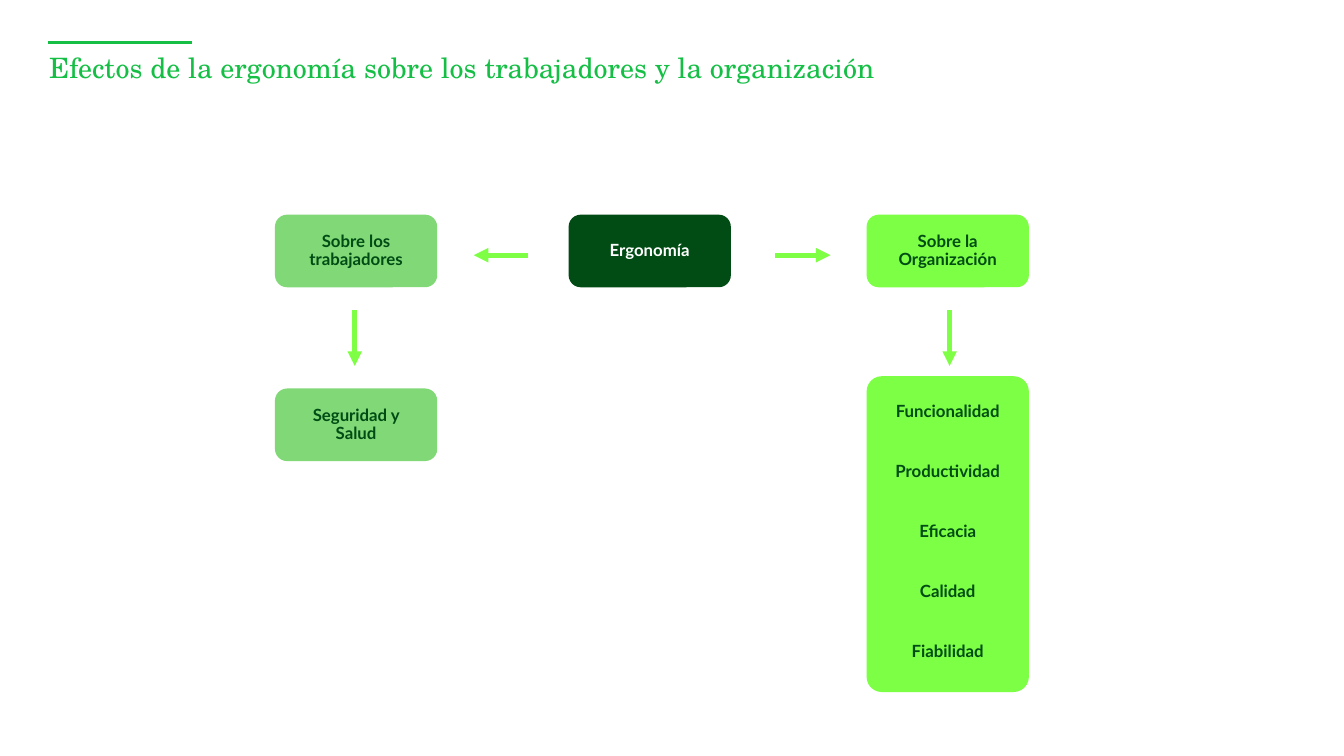
from lxml.etree import SubElement
from pptx import Presentation
from pptx.dml.color import RGBColor
from pptx.enum.shapes import MSO_CONNECTOR as Connector, MSO_SHAPE as Shape
from pptx.enum.text import MSO_ANCHOR as Anchor, PP_ALIGN as Align
from pptx.oxml.ns import qn
from pptx.util import Cm, Pt

COLORS = {
    "title": "15BF45",
    "dark": "004C14",
    "workers": "81D877",
    "organization": "7CFF44",
    "arrow": "7EFF45",
    "white": "FFFFFF",
}
CARD_WIDTH, CARD_HEIGHT = 4.09, 1.83
WORKERS_LEFT, ERGONOMICS_LEFT, ORGANIZATION_LEFT = 6.93, 14.33, 21.84
TOP_ROW = 5.41


class DiagramSlide:
    """Draws the parts of the diagram on one slide in a shared style."""

    def __init__(self, slide):
        self.shapes = slide.shapes

    def color(self, name):
        return RGBColor.from_string(COLORS[name])

    def line(self, start, end, color, width, arrow=False):
        line = self.shapes.add_connector(
            Connector.STRAIGHT, *(Cm(value) for value in (*start, *end)))
        line.line.color.rgb = self.color(color)
        line.line.width = Pt(width)
        if arrow:
            SubElement(line.line._get_or_add_ln(), qn("a:tailEnd"), type="triangle")
        SubElement(line._element.spPr, qn("a:effectLst"))

    def arrow(self, start, end):
        self.line(start, end, "arrow", 3.5, arrow=True)

    def text(self, words, box, font, size, color, insets=(0, 0), bold=False,
             align=Align.LEFT, anchor=Anchor.TOP):
        frame = self.shapes.add_textbox(*(Cm(value) for value in box)).text_frame
        frame.word_wrap = True
        frame.vertical_anchor = anchor
        frame.margin_left = frame.margin_right = Cm(insets[0])
        frame.margin_top = frame.margin_bottom = Cm(insets[1])
        paragraph = frame.paragraphs[0]
        paragraph.alignment = align
        paragraph.line_spacing = 0.9
        run = paragraph.add_run()
        run.text = words
        run.font.name = font
        run.font.size = Pt(size)
        run.font.bold = bold
        run.font.color.rgb = self.color(color)

    def label(self, words, left, middle, color="dark", lines=1):
        height = 0.25 + 0.46 * lines
        box = (left + 0.13, middle - height / 2, CARD_WIDTH - 0.26, height)
        self.text(words, box, "Lato", 12, color, (0.3, 0.13), True,
                  Align.CENTER, Anchor.MIDDLE)

    def panel(self, left, top, height, fill, rounding=0.1667):
        panel = self.shapes.add_shape(
            Shape.ROUNDED_RECTANGLE, Cm(left), Cm(top), Cm(CARD_WIDTH), Cm(height))
        panel.adjustments[0] = rounding
        panel.shadow.inherit = False
        panel.fill.solid()
        panel.fill.fore_color.rgb = self.color(fill)
        panel.line.fill.background()

    def card(self, words, left, top, fill, color="dark", lines=2):
        self.panel(left, top, CARD_HEIGHT, fill)
        self.label(words, left, top + CARD_HEIGHT / 2, color, lines)


def main():
    deck = Presentation()
    deck.slide_width, deck.slide_height = Cm(33.87), Cm(19.05)
    diagram = DiagramSlide(deck.slides.add_slide(deck.slide_layouts[6]))

    diagram.line((1.22, 1.07), (4.84, 1.07), "title", 1.75)
    diagram.text("Efectos de la ergonomía sobre los trabajadores y la organización",
                 (1.24, 1.37, 27.41, 1.45), "TeX Gyre Schola", 20, "title")

    diagram.card("Sobre los trabajadores", WORKERS_LEFT, TOP_ROW, "workers")
    diagram.card("Seguridad y Salud", WORKERS_LEFT, 9.79, "workers")
    diagram.card("Ergonomía", ERGONOMICS_LEFT, TOP_ROW, "dark", "white", 1)
    diagram.card("Sobre la Organización", ORGANIZATION_LEFT, TOP_ROW, "organization")

    diagram.panel(ORGANIZATION_LEFT, 9.48, 7.96, "organization", 0.094)
    effects = ("Funcionalidad", "Productividad", "Eficacia", "Calidad", "Fiabilidad")
    for row, effect in enumerate(effects):
        diagram.label(effect, ORGANIZATION_LEFT, 10.39 + 1.51 * row)

    for start, end in ((13.31, 11.94), (19.53, 20.93)):
        diagram.arrow((start, 6.43), (end, 6.43))
    for center in (8.94, 23.93):
        diagram.arrow((center, 7.82), (center, 9.22))

    deck.save("out.pptx")


if __name__ == "__main__":
    main()
